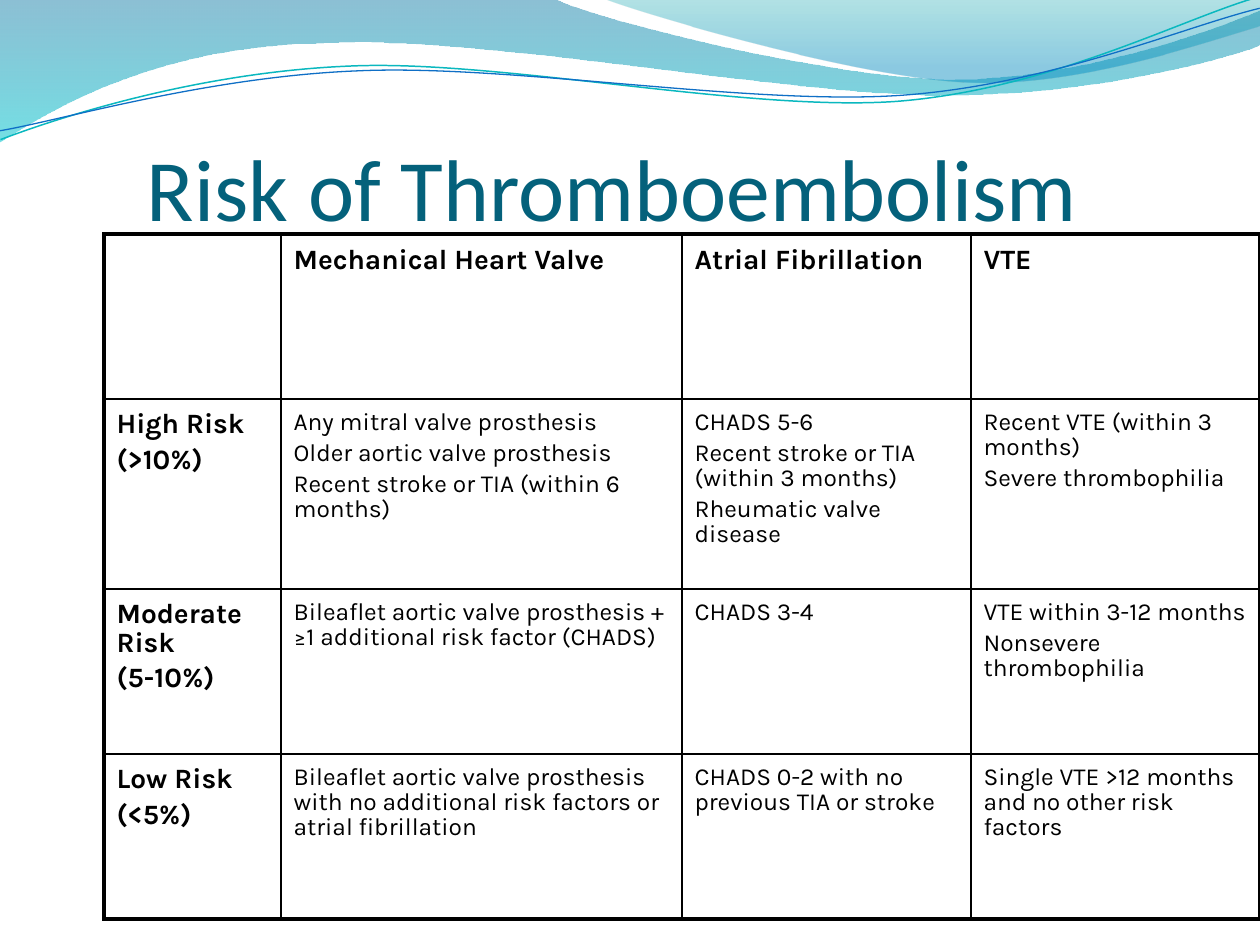
from lxml import etree
from pptx import Presentation
from pptx.dml.color import RGBColor
from pptx.enum.text import MSO_ANCHOR
from pptx.oxml.ns import qn
from pptx.util import Pt

BOTTOM = MSO_ANCHOR.BOTTOM
PX = 914400 / 126

THEME = {
    "title_font": "Calibri", "body_font": "Karla",
    "title_size": 50, "heading_size": 16, "body_size": 14,
    "title": "04617B", "ink": "000000",
    "outer_line": 2.25, "inner_line": 1,
    # gradient stops: position, colour, opacity in percent
    "back_wave": [(0, "0074A1", 45), (100, "00C6CF", 55)],
    "front_wave": [(0, "00A1A9", 30), (80, "008BBF", 45)],
    "teal_line": ("0AB8BF", 0.85), "blue_line": ("0F6FC6", 0.75),
}


def px(length):
    return round(length * PX)


def add_wave(start, segments, closed):
    """Outline of straight (2 numbers) and cubic (6 numbers) segments, in px."""
    builder = slide.shapes.build_freeform(px(start[0]), px(start[1]))
    builder.add_line_segments([(px(s[-2]), px(s[-1])) for s in segments], close=closed)
    wave = builder.convert_to_shape()
    wave.shadow.inherit = False
    # Give the cubic segments their control points
    for line, segment in zip(list(wave._element.iter(qn("a:lnTo"))), segments):
        if len(segment) == 6:
            line.tag = qn("a:cubicBezTo")
            for i in (0, 2):
                control = etree.Element(qn("a:pt"), x=str(px(segment[i]) - wave.left),
                                        y=str(px(segment[i + 1]) - wave.top))
                line.insert(i // 2, control)
    return wave


prs = Presentation()
prs.slide_width, prs.slide_height = px(1260), px(945)
slide = prs.slides.add_slide(prs.slide_layouts[6])

# Translucent waves along the top
wave_bands = [
    ("back_wave", (0, 0),
     [(554, -1), (600, 21, 837, 79, 955, 79), (1075, 79, 1207, 33, 1260, 11),
      (1261, 45), (1239, 55, 1096, 96, 940, 95), (784, 95, 481, 35, 324, 43),
      (163, 45, 58, 105, -1, 142)]),
    ("front_wave", (604, -1),
     [(641, 14, 859, 78, 969, 82), (1079, 87, 1211, 40, 1260, 26), (1260, 0)]),
]
for key, start, segments in wave_bands:
    band = add_wave(start, segments, True)
    band.line.fill.background()
    band.fill.gradient()
    band.fill.gradient_angle = 270
    for stop, (position, colour, _) in zip(band.fill.gradient_stops, THEME[key]):
        stop.position = position / 100
        stop.color.rgb = RGBColor.from_string(colour)
    colours = band._element.spPr.iter(qn("a:srgbClr"))
    for element, (_, _, opacity) in zip(colours, THEME[key]):
        etree.SubElement(element, qn("a:alpha"), val=str(opacity * 1000))

# Thin wave lines, slightly tilted
wave_lines = [
    ("teal_line", (-2, 110), [(59, 90, 199, 52, 350, 53), (499, 53, 745, 118, 896, 114),
                              (1049, 109, 1184, 45, 1260, 27)]),
    ("blue_line", (-2, 101), [(57, 94, 207, 57, 357, 58), (509, 58, 750, 112, 902, 108),
                              (1052, 104, 1188, 52, 1262, 38)]),
]
for key, start, segments in wave_lines:
    colour, width = THEME[key]
    ripple = add_wave(start, segments, False)
    ripple.rotation = 357.3
    ripple.fill.background()
    ripple.line.color.rgb = RGBColor.from_string(colour)
    ripple.line.width = Pt(width)

# Title
title = slide.shapes.add_textbox(px(147), px(42), px(1040), px(197)).text_frame
title.word_wrap = True
title.vertical_anchor = BOTTOM
title.margin_left = title.margin_right = title.margin_bottom = 0
heading = title.paragraphs[0]
heading.text = "Risk of Thromboembolism"
heading.font.name = THEME["title_font"]
heading.font.size = Pt(THEME["title_size"])
heading.font.color.rgb = RGBColor.from_string(THEME["title"])

# Risk table: each cell is a list of paragraphs
risk_rows = [
    [[], ["Mechanical Heart Valve"], ["Atrial Fibrillation"], ["VTE"]],
    [["High Risk", "(>10%)"],
     ["Any mitral valve prosthesis", "Older aortic valve prosthesis",
      "Recent stroke or TIA (within 6 months)"],
     ["CHADS 5-6", "Recent stroke or TIA (within 3 months)", "Rheumatic valve disease"],
     ["Recent VTE (within 3 months)", "Severe thrombophilia"]],
    [["Moderate Risk", "(5-10%)"],
     ["Bileaflet aortic valve prosthesis + ≥1 additional risk factor (CHADS)"],
     ["CHADS 3-4"],
     ["VTE within 3-12 months", "Nonsevere thrombophilia"]],
    [["Low Risk", "(<5%)"],
     ["Bileaflet aortic valve prosthesis with no additional risk factors or atrial fibrillation"],
     ["CHADS 0-2 with no previous TIA or stroke"],
     ["Single VTE >12 months and no other risk factors"]],
]
column_widths = [177, 401, 289, 289]
row_heights = [165, 190, 165, 165]
last_row, last_column = len(row_heights) - 1, len(column_widths) - 1

risks = slide.shapes.add_table(len(row_heights), len(column_widths), px(104), px(234),
                               px(sum(column_widths)), px(sum(row_heights))).table
risks.first_row = risks.horz_banding = False
for column, width in zip(risks.columns, column_widths):
    column.width = px(width)
for row, height in zip(risks.rows, row_heights):
    row.height = px(height)

for r, row in enumerate(risk_rows):
    for c, lines in enumerate(row):
        cell = risks.cell(r, c)
        is_heading = r == 0 or c == 0
        size = THEME["heading_size" if is_heading else "body_size"]
        cell.margin_top = px(13 if r == 0 else 12)

        # Borders: heavy on the outside of the table
        properties = cell._tc.get_or_add_tcPr()
        edges = {"L": c == 0, "R": c == last_column, "T": r == 0, "B": r == last_row}
        for side, is_outer in edges.items():
            width = Pt(THEME["outer_line" if is_outer else "inner_line"])
            border = etree.SubElement(properties, qn("a:ln" + side), w=str(width))
            fill = etree.SubElement(border, qn("a:solidFill"))
            etree.SubElement(fill, qn("a:srgbClr"), val=THEME["ink"])
        cell.fill.background()

        # Text
        cell.text = "\n".join(lines)
        for paragraph in cell.text_frame.paragraphs:
            paragraph.line_spacing = 0.87
            paragraph.space_before = Pt(size / 4)
            paragraph.font.name = THEME["body_font"]
            paragraph.font.size = Pt(size)
            paragraph.font.bold = is_heading
            paragraph.font.color.rgb = RGBColor.from_string(THEME["ink"])

prs.save("out.pptx")
